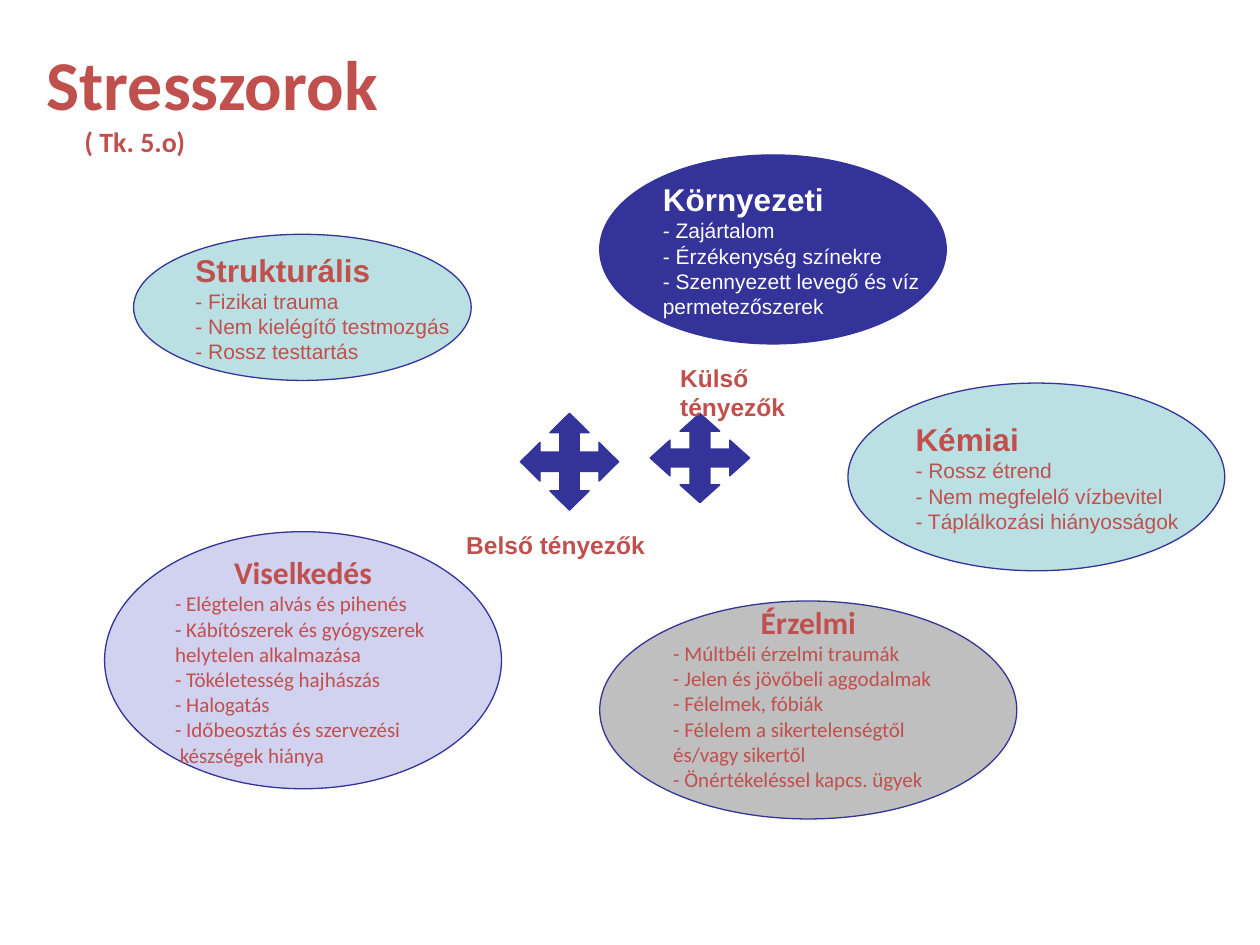
from pptx import Presentation
from pptx.dml.color import RGBColor
from pptx.enum.shapes import MSO_SHAPE
from pptx.enum.text import MSO_ANCHOR, PP_ALIGN
from pptx.util import Inches, Pt

NAVY, RED, WHITE = "333399", "C0504D", "FFFFFF"
TEAL, LILAC, GREY = "BBE0E3", "D1D1F0", "BFBFBF"

# Each ellipse: position and size, fill, text format, heading, lines
STRESSORS = [
    ((1.06, 1.86, 2.68, 1.16), TEAL, {}, "Strukturális",
     ["- Fizikai trauma", "- Nem kielégítő testmozgás", "- Rossz testtartás"]),
    ((4.76, 1.23, 2.75, 1.5), NAVY, {"color": WHITE}, "Környezeti",
     ["- Zajártalom", "- Érzékenység színekre",
      "- Szennyezett levegő és víz", "permetezőszerek"]),
    ((6.73, 3.04, 2.99, 1.49), TEAL, {}, "Kémiai",
     ["- Rossz étrend", "- Nem megfelelő vízbevitel",
      "- Táplálkozási hiányosságok"]),
    ((0.83, 4.22, 3.15, 2.04), LILAC, {"font": "Calibri"}, "Viselkedés",
     ["- Elégtelen alvás és pihenés", "- Kábítószerek és gyógyszerek",
      "helytelen alkalmazása", "- Tökéletesség hajhászás", "- Halogatás",
      "- Időbeosztás és szervezési", " készségek hiánya"]),
    ((4.76, 4.77, 3.31, 1.73), GREY, {"font": "Calibri"}, "Érzelmi",
     ["- Múltbéli érzelmi traumák", "- Jelen és jövőbeli aggodalmak",
      "- Félelmek, fóbiák", "- Félelem a sikertelenségtől",
      "és/vagy sikertől", "- Önértékeléssel kapcs. ügyek"]),
]


def rgb(value):
    return RGBColor.from_string(value)


def inches(values):
    return [Inches(value) for value in values]


def write(frame, text, size=12, font="Arial", color=RED, bold=False,
          align=PP_ALIGN.LEFT, indent=0):
    """Fill the frame's empty first paragraph, or append a new one."""
    first = frame.paragraphs[0]
    paragraph = frame.add_paragraph() if first.runs else first
    paragraph.alignment = align
    if indent:
        paragraph._p.get_or_add_pPr().set("marL", str(Inches(indent)))
    run = paragraph.add_run()
    run.text = text
    run.font.size, run.font.name, run.font.bold = Pt(size), font, bold
    run.font.color.rgb = rgb(color)


def paint(shape, fill):
    shape.shadow.inherit = False
    shape.fill.solid()
    shape.fill.fore_color.rgb = rgb(fill)
    shape.line.color.rgb = rgb(NAVY)
    shape.line.width = Pt(0.75)


def add_title(slide):
    title = slide.shapes.title
    title.left, title.top, title.width, title.height = inches((0.27, 0.28, 7.87, 1.01))
    frame = title.text_frame
    frame.word_wrap = True
    frame.vertical_anchor = MSO_ANCHOR.MIDDLE
    write(frame, "Stresszorok", size=40, font="Calibri", bold=True)
    write(frame, "( Tk. 5.o)", size=16, font="Calibri", bold=True, indent=0.3)


def add_four_way_arrow(slide, left, top, width, height):
    """Draw one arm on a ten-step grid and turn it four times."""
    arm = [(0, -5), (-2, -3), (-1, -3), (-1, -1), (-3, -1), (-3, -2)]
    outline = []
    for _ in range(4):
        outline += arm
        arm = [(y, -x) for x, y in arm]
    points = [(Inches(left + width * (x + 5) / 10), Inches(top + height * (y + 5) / 10))
              for x, y in outline]
    builder = slide.shapes.build_freeform(*points[0])
    builder.add_line_segments(points[1:], close=True)
    paint(builder.convert_to_shape(), NAVY)


def add_label(slide, place, text, align=PP_ALIGN.LEFT, wrap=False, right_inset=0.1):
    frame = slide.shapes.add_textbox(*inches(place)).text_frame
    frame.word_wrap = wrap
    frame.margin_right = Inches(right_inset)
    write(frame, text, size=14, bold=True, align=align)


def add_stressor(slide, place, fill, text_format, heading, lines):
    ellipse = slide.shapes.add_shape(MSO_SHAPE.OVAL, *inches(place))
    paint(ellipse, fill)
    frame = ellipse.text_frame
    frame.word_wrap = False
    frame.vertical_anchor = MSO_ANCHOR.MIDDLE
    if heading == "Érzelmi":
        frame.margin_bottom = Inches(0.25)
    centred = text_format.get("font") == "Calibri"
    write(frame, heading, size=18, bold=True,
          align=PP_ALIGN.CENTER if centred else PP_ALIGN.LEFT, **text_format)
    for line in lines:
        write(frame, line, **text_format)


def main():
    presentation = Presentation()
    presentation.slide_width, presentation.slide_height = Inches(10), Inches(7.5)
    slide = presentation.slides.add_slide(presentation.slide_layouts[5])
    add_title(slide)
    add_four_way_arrow(slide, 4.13, 3.28, 0.78, 0.77)
    add_four_way_arrow(slide, 5.16, 3.28, 0.79, 0.71)
    add_label(slide, (3.6, 4.16, 1.62, 0.33), "Belső tényezők", align=PP_ALIGN.CENTER)
    add_label(slide, (5.3, 2.83, 1.63, 0.33), "Külső tényezők", wrap=True, right_inset=0.4)
    for stressor in STRESSORS:
        add_stressor(slide, *stressor)
    presentation.save("out.pptx")


if __name__ == "__main__":
    main()
